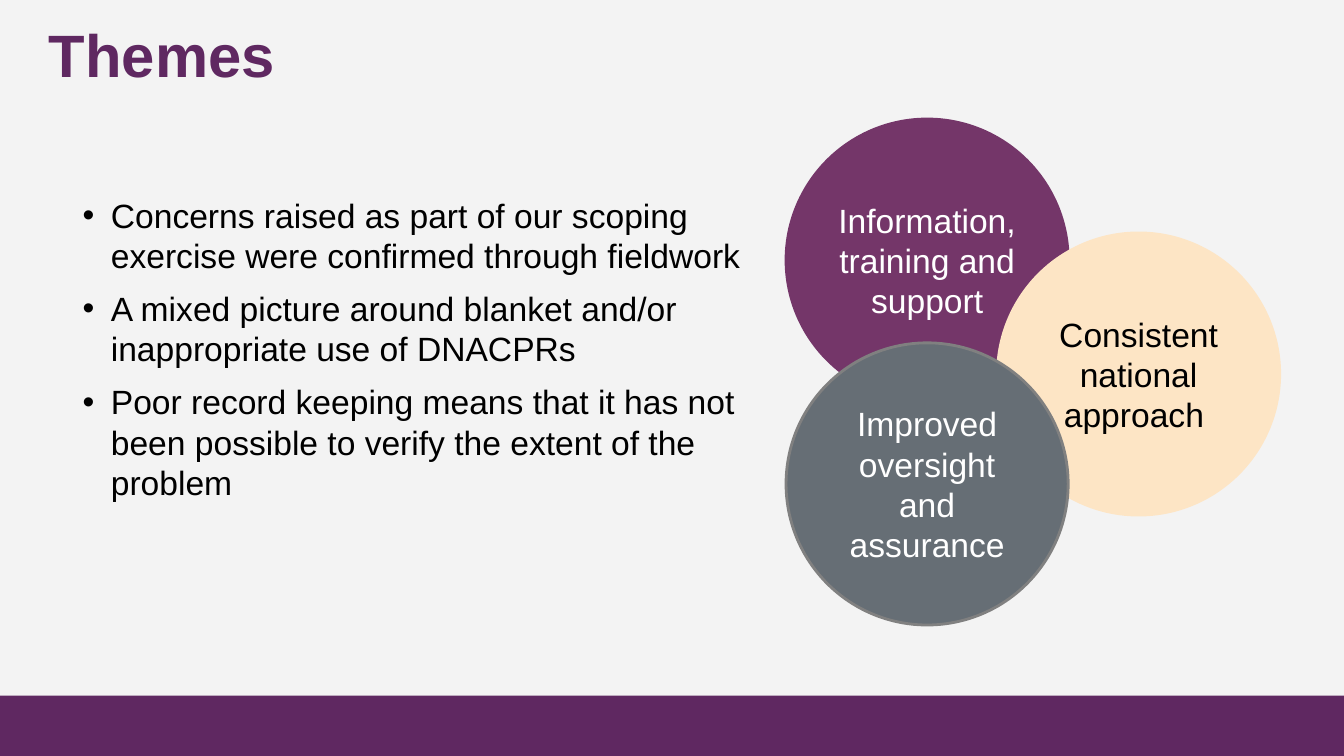
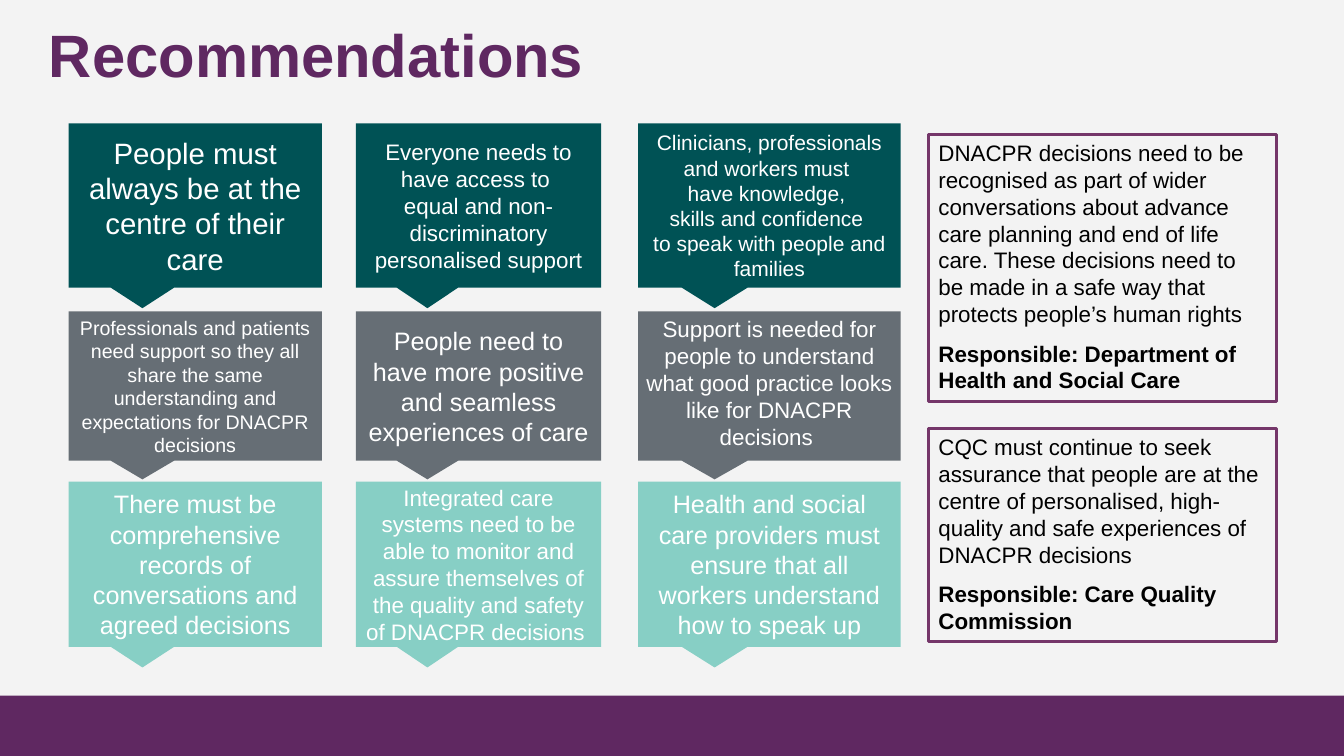
from dataclasses import dataclass
from itertools import product

from lxml.etree import SubElement
from pptx import Presentation
from pptx.dml.color import RGBColor
from pptx.enum.shapes import MSO_SHAPE
from pptx.enum.text import MSO_ANCHOR, MSO_AUTO_SIZE, PP_ALIGN
from pptx.oxml.ns import qn
from pptx.presentation import Presentation as Deck
from pptx.shapes.autoshape import Shape
from pptx.slide import Slide
from pptx.text.text import TextFrame
from pptx.util import Cm, Pt

FONT = "Arial"
PAPER = RGBColor(0xF3, 0xF3, 0xF3)
PURPLE = RGBColor(0x5F, 0x28, 0x61)
PLUM = RGBColor(0x74, 0x36, 0x69)
PEACH = RGBColor(0xFD, 0xE5, 0xC5)
SLATE = RGBColor(0x66, 0x6E, 0x75)
GREY = RGBColor(0x80, 0x80, 0x80)
TEAL = RGBColor(0x00, 0x52, 0x55)
AQUA = RGBColor(0x87, 0xCF, 0xC5)
BLACK = RGBColor(0x00, 0x00, 0x00)
WHITE = RGBColor(0xFF, 0xFF, 0xFF)

WIDTH, HEIGHT = 33.87, 19.05
BAND_TOP = 17.53
TITLE_LAYOUT, LIST_LAYOUT = 5, 1
CIRCLE_SIZE = 7.11


@dataclass(frozen=True)
class Area:
    """A rectangle on the page, in centimetres."""

    left: float
    top: float
    width: float
    height: float


@dataclass(frozen=True)
class Circle:
    """One theme in the cluster of circles."""

    text: str
    left: float
    top: float
    fill: RGBColor
    line: RGBColor
    color: RGBColor = WHITE


@dataclass(frozen=True)
class Column:
    """The horizontal extent of a column of callouts."""

    left: float
    width: float


@dataclass(frozen=True)
class Row:
    """The vertical extent and fill of a row of callouts."""

    top: float
    height: float
    fill: RGBColor


@dataclass(frozen=True)
class Callout:
    """The text of one recommendation."""

    size: float
    texts: tuple[str, ...]
    anchor: MSO_ANCHOR = MSO_ANCHOR.MIDDLE


@dataclass(frozen=True)
class Duty:
    """A framed recommendation with the body responsible for it."""

    top: float
    height: float
    text: str
    owner: str


FINDINGS = (
    "Concerns raised as part of our scoping exercise were confirmed through fieldwork",
    "A mixed picture around blanket and/or inappropriate use of DNACPRs",
    "Poor record keeping means that it has not been possible to verify the extent of the problem",
)
CIRCLES = (
    Circle("Information, training and support", 19.81, 3, PLUM, PLUM),
    Circle("Consistent national approach ", 25.14, 5.87, PEACH, PEACH, BLACK),
    Circle("Improved oversight and assurance", 19.81, 8.64, SLATE, GREY),
)
COLUMNS = (Column(1.73, 6.38), Column(8.97, 6.18), Column(16.08, 6.62))
ROWS = (Row(3.11, 4.14, TEAL), Row(7.85, 3.76, SLATE), Row(12.14, 4.16, AQUA))
CALLOUTS = (
    Callout(21, ("People must always be at the centre of their care",)),
    Callout(16, (
        "Everyone needs to have access to ",
        "equal and non-discriminatory personalised support",
    )),
    Callout(15, (
        "Clinicians, professionals and workers must ",
        "have knowledge, ",
        "skills and confidence ",
        "to speak with people and families",
    )),
    Callout(14, (
        "Professionals and patients need support so they all share the same "
        "understanding and expectations for DNACPR decisions",
    )),
    Callout(18, ("People need to have more positive and seamless experiences of care",)),
    Callout(16, (
        "Support is needed for people to understand what good practice looks "
        "like for DNACPR decisions ",
    ), MSO_ANCHOR.TOP),
    Callout(18, ("There must be comprehensive records of conversations and agreed decisions",)),
    Callout(16, (
        "Integrated care systems need to be able to monitor and assure themselves "
        "of the quality and safety of DNACPR decisions ",
    )),
    Callout(18, (
        "Health and social care providers must ensure that all workers understand "
        "how to speak up",
    )),
)
DUTIES = (
    Duty(
        3.38, 6.73,
        "DNACPR decisions need to be recognised as part of wider conversations about "
        "advance care planning and end of life care. These decisions need to be made "
        "in a safe way that protects people’s human rights",
        "Responsible: Department of Health and Social Care",
    ),
    Duty(
        10.8, 5.36,
        "CQC must continue to seek assurance that people are at the centre of "
        "personalised, high-quality and safe experiences of DNACPR decisions",
        "Responsible: Care Quality Commission",
    ),
)


def write(
    frame: TextFrame,
    text: str,
    *,
    size: float,
    color: RGBColor,
    bold: bool = False,
    align: PP_ALIGN = PP_ALIGN.LEFT,
    gap: float = 0,
    bullet: bool = False,
) -> None:
    """Add a formatted paragraph, with a gap before all but the first."""
    first = not frame.text
    para = frame.paragraphs[0] if first else frame.add_paragraph()
    para.alignment = align
    para.space_before = Pt(0 if first else gap)
    if bullet:
        properties = para._p.get_or_add_pPr()
        properties.set("marL", str(Cm(0.71)))
        properties.set("indent", str(-Cm(0.71)))
        SubElement(properties, qn("a:buFont"), typeface=FONT)
        SubElement(properties, qn("a:buChar"), char="•")
    span = para.add_run()
    span.text = text
    span.font.name = FONT
    span.font.size = Pt(size)
    span.font.bold = bold
    span.font.color.rgb = color


def place(shape: Shape, area: Area) -> None:
    """Move and size a placeholder and stop it from shrinking its text."""
    shape.left, shape.top = Cm(area.left), Cm(area.top)
    shape.width, shape.height = Cm(area.width), Cm(area.height)
    shape.text_frame.auto_size = MSO_AUTO_SIZE.NONE
    shape.text_frame.vertical_anchor = MSO_ANCHOR.TOP


def add_box(
    page: Slide,
    kind: MSO_SHAPE,
    area: Area,
    *,
    fill: RGBColor | None = None,
    line: RGBColor | None = None,
    anchor: MSO_ANCHOR = MSO_ANCHOR.MIDDLE,
) -> Shape:
    """Draw a flat preset shape that wraps its text."""
    box = page.shapes.add_shape(
        kind, Cm(area.left), Cm(area.top), Cm(area.width), Cm(area.height)
    )
    box.shadow.inherit = False
    if fill is None:
        box.fill.background()
    else:
        box.fill.solid()
        box.fill.fore_color.rgb = fill
    if line is None:
        box.line.fill.background()
    else:
        box.line.color.rgb = line
        box.line.width = Pt(2)
    box.text_frame.word_wrap = True
    box.text_frame.vertical_anchor = anchor
    return box


def add_page(deck: Deck, layout: int, title: str) -> Slide:
    """Add a page with the shared footer band and title style."""
    page = deck.slides.add_slide(deck.slide_layouts[layout])
    add_box(
        page, MSO_SHAPE.RECTANGLE, Area(0, BAND_TOP, WIDTH, HEIGHT - BAND_TOP), fill=PURPLE
    )
    place(page.shapes.title, Area(0.98, 0.33, 30.48, 2.34))
    write(page.shapes.title.text_frame, title, size=42.7, color=PURPLE, bold=True)
    return page


def add_findings(page: Slide) -> None:
    """Fill the body placeholder with the bulleted findings."""
    body = page.placeholders[1]
    place(body, Area(1.83, 4.78, 17.2, 9.09))
    for finding in FINDINGS:
        write(body.text_frame, finding, size=24, color=BLACK, gap=9, bullet=True)


def add_circles(page: Slide) -> None:
    """Draw the overlapping theme circles."""
    for circle in CIRCLES:
        area = Area(circle.left, circle.top, CIRCLE_SIZE, CIRCLE_SIZE)
        box = add_box(page, MSO_SHAPE.OVAL, area, fill=circle.fill, line=circle.line)
        write(box.text_frame, circle.text, size=24, color=circle.color, align=PP_ALIGN.CENTER)


def add_callouts(page: Slide) -> None:
    """Draw the grid of recommendations row by row."""
    for (row, column), callout in zip(product(ROWS, COLUMNS), CALLOUTS):
        area = Area(column.left, row.top, column.width, row.height)
        box = add_box(
            page, MSO_SHAPE.RECTANGULAR_CALLOUT, area, fill=row.fill, anchor=callout.anchor
        )
        frame = box.text_frame
        frame.margin_left = frame.margin_right = Cm(0.18)
        frame.margin_top = frame.margin_bottom = Cm(0.1)
        for text in callout.texts:
            write(frame, text, size=callout.size, color=WHITE, align=PP_ALIGN.CENTER)


def add_duties(page: Slide) -> None:
    """Draw the framed recommendations with their owners."""
    for duty in DUTIES:
        area = Area(23.4, duty.top, 8.77, duty.height)
        box = add_box(page, MSO_SHAPE.RECTANGLE, area, line=PLUM, anchor=MSO_ANCHOR.TOP)
        write(box.text_frame, duty.text, size=16, color=BLACK)
        write(box.text_frame, duty.owner, size=16, color=BLACK, bold=True, gap=9)


def main() -> None:
    """Build and save the deck."""
    deck = Presentation()
    deck.slide_width, deck.slide_height = Cm(WIDTH), Cm(HEIGHT)
    backdrop = deck.slide_master.background.fill
    backdrop.solid()
    backdrop.fore_color.rgb = PAPER
    themes = add_page(deck, LIST_LAYOUT, "Themes")
    add_findings(themes)
    add_circles(themes)
    recommendations = add_page(deck, TITLE_LAYOUT, "Recommendations")
    add_callouts(recommendations)
    add_duties(recommendations)
    deck.save("out.pptx")


if __name__ == "__main__":
    main()
